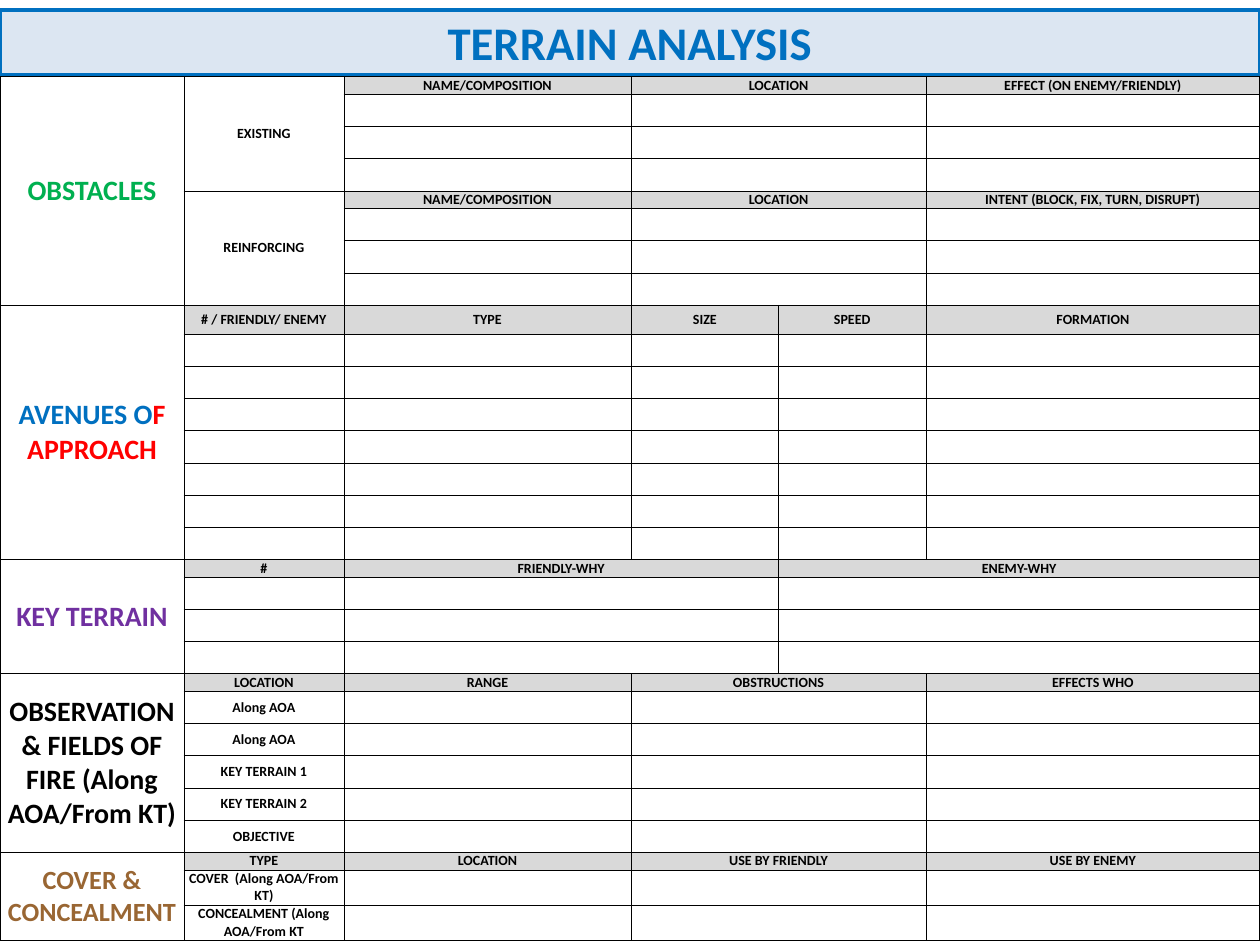
import dataclasses

import lxml.etree
import pptx
import pptx.dml.color
import pptx.enum.shapes
import pptx.enum.text
import pptx.oxml.ns
import pptx.slide
import pptx.util

BLACK, BLUE, GREY, PALE = "000000", "0070C0", "D9D9D9", "DCE6F2"
SLIM, PLAIN, MEDIUM, TALL = 14, 25.6, 23, 28
COLUMNS = [1.46, 1.27, 2.28, 1.17, 1.17, 2.65]
TABLE_TOP, TABLE_HEIGHT = 0.47 / 7.5, 7 / 7.5
INSETS = ("margin_left", "margin_top", "margin_right", "margin_bottom")


def color(value):
    return pptx.dml.color.RGBColor.from_string(value)


def style(target, values):
    for name, value in values.items():
        setattr(target, name, value)


@dataclasses.dataclass
class Sheet:
    page: pptx.slide.Slide
    width: int
    height: int
    font: str = "Calibri"
    inner: float = 0.5
    outer: float = 1

    def label(self, frame, spans, size):
        para = frame.paragraphs[0]
        para.alignment = pptx.enum.text.PP_ALIGN.CENTER
        for text, ink in spans:
            span = para.add_run()
            span.text = text
            style(span.font, {"name": self.font, "size": pptx.util.Pt(size), "bold": True})
            span.font.color.rgb = color(ink)
        if not spans:
            tag = pptx.oxml.ns.qn("a:endParaRPr")
            lxml.etree.SubElement(para._p, tag, sz=str(size * 100), b="1")

    def banner(self, text, top, height, size):
        box = self.page.shapes.add_shape(
            pptx.enum.shapes.MSO_SHAPE.RECTANGLE,
            0, round(top * self.height), self.width, round(height * self.height))
        box.shadow.inherit = False
        box.fill.solid()
        box.fill.fore_color.rgb = color(PALE)
        box.line.color.rgb = color(BLUE)
        box.line.width = pptx.util.Pt(2)
        insets = [pptx.util.Inches(inset) for inset in (0.12, 0.06, 0.12, 0.06)]
        style(box.text_frame, dict(zip(INSETS, insets)))
        style(box.text_frame, {"word_wrap": True,
                               "vertical_anchor": pptx.enum.text.MSO_ANCHOR.MIDDLE})
        self.label(box.text_frame, [(text, BLUE)], size)

    def grid(self, rows, columns, top, height):
        frame = self.page.shapes.add_table(
            len(rows), len(columns), 0, round(top * self.height),
            self.width, round(height * self.height))
        table = frame.table
        style(table, {"first_row": False, "horz_banding": False})
        for column, share in zip(table.columns, columns):
            column.width = round(self.width * share / sum(columns))
        for row, share in zip(table.rows, rows):
            row.height = round(self.height * height * share / sum(rows))
        return table

    def cell(self, table, row, column, spans=(), size=8, fill=None, down=1, across=1):
        cell = table.cell(row, column)
        if down * across > 1:
            cell.merge(table.cell(row + down - 1, column + across - 1))
        style(cell, dict.fromkeys(INSETS, 0))
        cell.vertical_anchor = pptx.enum.text.MSO_ANCHOR.MIDDLE
        self.label(cell.text_frame, spans, size)
        edges = {"L": column == 0, "R": column + across == len(table.columns),
                 "T": row == 0, "B": row + down == len(table.rows)}
        for side, outside in edges.items():
            self.border(cell, side, self.outer if outside else self.inner)
        if fill:
            cell.fill.solid()
            cell.fill.fore_color.rgb = color(fill)
        else:
            cell.fill.background()

    def border(self, cell, side, points):
        qn = pptx.oxml.ns.qn
        line = lxml.etree.SubElement(cell._tc.get_or_add_tcPr(), qn("a:ln" + side),
                                     w=str(int(pptx.util.Pt(points))))
        solid = lxml.etree.SubElement(line, qn("a:solidFill"))
        lxml.etree.SubElement(solid, qn("a:srgbClr"), val=BLACK)

    def block(self, table, row, stub, headings, labels):
        starts = list(headings)
        ends = starts[1:] + [len(table.columns)]
        if stub:
            self.cell(table, row, 1, [(stub, BLACK)], down=len(labels) + 1)
        for start, end in zip(starts, ends):
            self.cell(table, row, start, [(headings[start], BLACK)], fill=GREY,
                      across=end - start)
            for step, label in enumerate(labels, 1):
                shown = label if start == 1 else ""
                self.cell(table, row + step, start, [(shown, BLACK)] if shown else [],
                          across=end - start)
        return row + len(labels) + 1


OBSTACLE_HEADINGS = {2: "NAME/COMPOSITION", 3: "LOCATION"}
SECTIONS = [
    ([("OBSTACLES", "00B050")], 16, SLIM, PLAIN, [
        ("EXISTING", OBSTACLE_HEADINGS | {5: "EFFECT (ON ENEMY/FRIENDLY)"}, [""] * 3),
        ("REINFORCING", OBSTACLE_HEADINGS | {5: "INTENT (BLOCK, FIX, TURN, DISRUPT)"}, [""] * 3)]),
    ([("AVENUES O", BLUE), ("F APPROACH", "FF0000")], 16, MEDIUM, PLAIN, [
        ("", {1: "# / FRIENDLY/ ENEMY", 2: "TYPE", 3: "SIZE", 4: "SPEED", 5: "FORMATION"},
         [""] * 7)]),
    ([("KEY TERRAIN", "7030A0")], 16, SLIM, PLAIN, [
        ("", {1: "#", 2: "FRIENDLY-WHY", 4: "ENEMY-WHY"}, [""] * 3)]),
    ([("OBSERVATION & FIELDS OF FIRE (Along AOA/From KT)", BLACK)], 16, SLIM, PLAIN, [
        ("", {1: "LOCATION", 2: "RANGE", 3: "OBSTRUCTIONS", 5: "EFFECTS WHO"},
         ["Along AOA", "Along AOA", "KEY TERRAIN 1", "KEY TERRAIN 2", "OBJECTIVE"])]),
    ([("COVER & CONCEALMENT", "996633")], 15, SLIM, TALL, [
        ("", {1: "TYPE", 2: "LOCATION", 3: "USE BY FRIENDLY", 5: "USE BY ENEMY"},
         ["COVER  (Along AOA/From KT)", "CONCEALMENT (Along AOA/From KT"])]),
]

deck = pptx.Presentation()
deck.slide_width, deck.slide_height = pptx.util.Inches(10), pptx.util.Inches(7.5)
sheet = Sheet(deck.slides.add_slide(deck.slide_layouts[6]), deck.slide_width, deck.slide_height)

row_shares = [SLIM]
for _, _, heading_share, body_share, blocks in SECTIONS:
    for _, _, labels in blocks:
        row_shares += [heading_share] + [body_share] * len(labels)

table = sheet.grid(row_shares, COLUMNS, TABLE_TOP, TABLE_HEIGHT)
for column, across in ((0, 1), (1, 1), (2, 4)):
    sheet.cell(table, 0, column, fill=GREY, across=across)
row = 1
for title, size, _, _, blocks in SECTIONS:
    first = row
    for stub, headings, labels in blocks:
        row = sheet.block(table, row, stub, headings, labels)
    sheet.cell(table, first, 0, title, size, down=row - first)

sheet.banner("TERRAIN ANALYSIS", 0.08 / 7.5, 0.51 / 7.5, 26.7)
deck.save("out.pptx")
